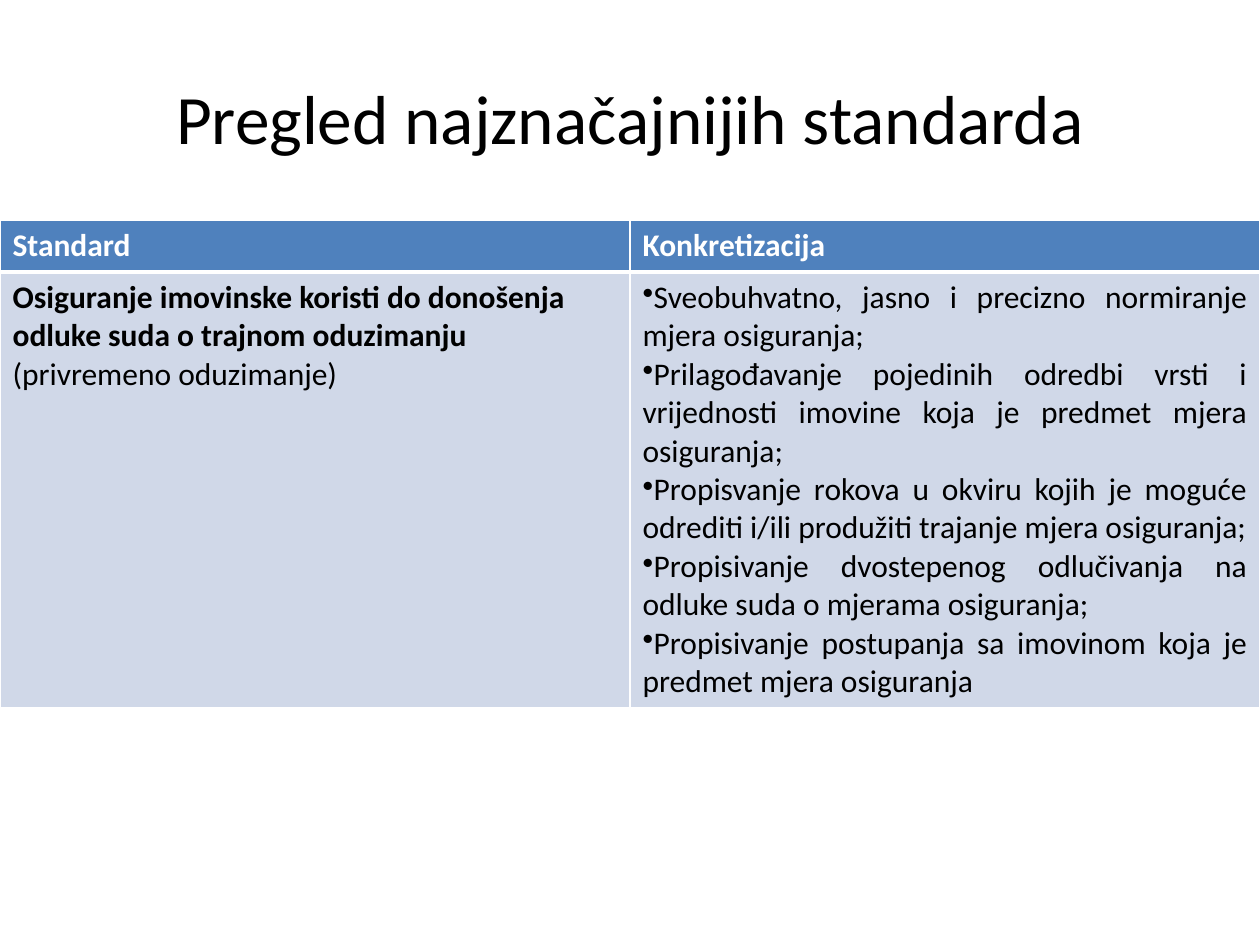
from lxml.etree import SubElement as Sub
from pptx import Presentation
from pptx.dml.color import RGBColor
from pptx.enum.text import MSO_ANCHOR as Anchor, PP_ALIGN as Align
from pptx.oxml import parse_xml
from pptx.oxml.ns import nsdecls, qn
from pptx.util import Pt

UNIT = 914400 // 126
WHITE, BLACK, BLUE, PALE = "FFFFFF", "000000", "4F81BD", "D0D8E8"
HEADS = ["Standard", "Konkretizacija"]
GOAL = [
    ("Osiguranje imovinske koristi do donošenja odluke suda o trajnom oduzimanju", True),
    (" (privremeno oduzimanje)", False),
]
STEPS = [
    "Sveobuhvatno, jasno i precizno normiranje mjera osiguranja;",
    "Prilagođavanje pojedinih odredbi vrsti i vrijednosti imovine koja je predmet mjera osiguranja;",
    "Propisvanje rokova u okviru kojih je moguće odrediti i/ili produžiti trajanje mjera osiguranja;",
    "Propisivanje dvostepenog odlučivanja na odluke suda o mjerama osiguranja;",
    "Propisivanje postupanja sa imovinom koja je predmet mjera osiguranja",
]


def px(num):
    return num * UNIT


def paint(code):
    return RGBColor.from_string(code)


def write(para, text, size=18, color=BLACK, bold=False, align=Align.LEFT, bullet=None):
    para.alignment = align
    run = para.add_run()
    run.text = text
    font = run.font
    font.name, font.size, font.bold = "Calibri", Pt(size), bold
    font.color.rgb = paint(color)
    if bullet:
        Sub(para._p.get_or_add_pPr(), qn("a:buChar"), char=bullet)


class Deck:
    def __init__(self, wide, high):
        self.show = Presentation()
        self.show.slide_width, self.show.slide_height = px(wide), px(high)
        self.slide = self.show.slides.add_slide(self.show.slide_layouts[5])

    def title(self, text, left, top, wide, high):
        box = self.slide.shapes.title
        box.left, box.top, box.width, box.height = map(px, (left, top, wide, high))
        box.text_frame.vertical_anchor = Anchor.MIDDLE
        write(box.text_frame.paragraphs[0], text, size=39.6, align=Align.CENTER)

    def table(self, left, top, cols, rows):
        area = map(px, (left, top, sum(cols), sum(rows)))
        grid = self.slide.shapes.add_table(len(rows), len(cols), *area).table
        for col, wide in zip(grid.columns, cols):
            col.width = px(wide)
        for row, high in zip(grid.rows, rows):
            row.height = px(high)
        return grid

    def cell(self, cell, fill, **edges):
        cell.fill.solid()
        cell.fill.fore_color.rgb = paint(fill)
        props = cell._tc.get_or_add_tcPr()
        for spot, side in enumerate("LRTB"):
            line = parse_xml(
                f'<a:ln{side} {nsdecls("a")} w="{Pt(edges.get(side, 1))}">'
                f'<a:solidFill><a:srgbClr val="{WHITE}"/></a:solidFill></a:ln{side}>'
            )
            props.insert(spot, line)
        return cell.text_frame


def main():
    deck = Deck(1260, 945)
    deck.title("Pregled najznačajnijih standarda", 63, 38, 1134, 157)
    grid = deck.table(0, 220, [630, 630], [52, 434])
    for col, head in enumerate(HEADS):
        frame = deck.cell(grid.cell(0, col), BLUE, B=3)
        write(frame.paragraphs[0], head, color=WHITE, bold=True)
    goal, steps = [deck.cell(grid.cell(1, col), PALE, T=3) for col in range(2)]
    for text, bold in GOAL:
        write(goal.paragraphs[0], text, bold=bold)
    for spot, text in enumerate(STEPS):
        para = steps.add_paragraph() if spot else steps.paragraphs[0]
        write(para, text, align=Align.JUSTIFY, bullet="•")
    deck.show.save("out.pptx")


if __name__ == "__main__":
    main()
